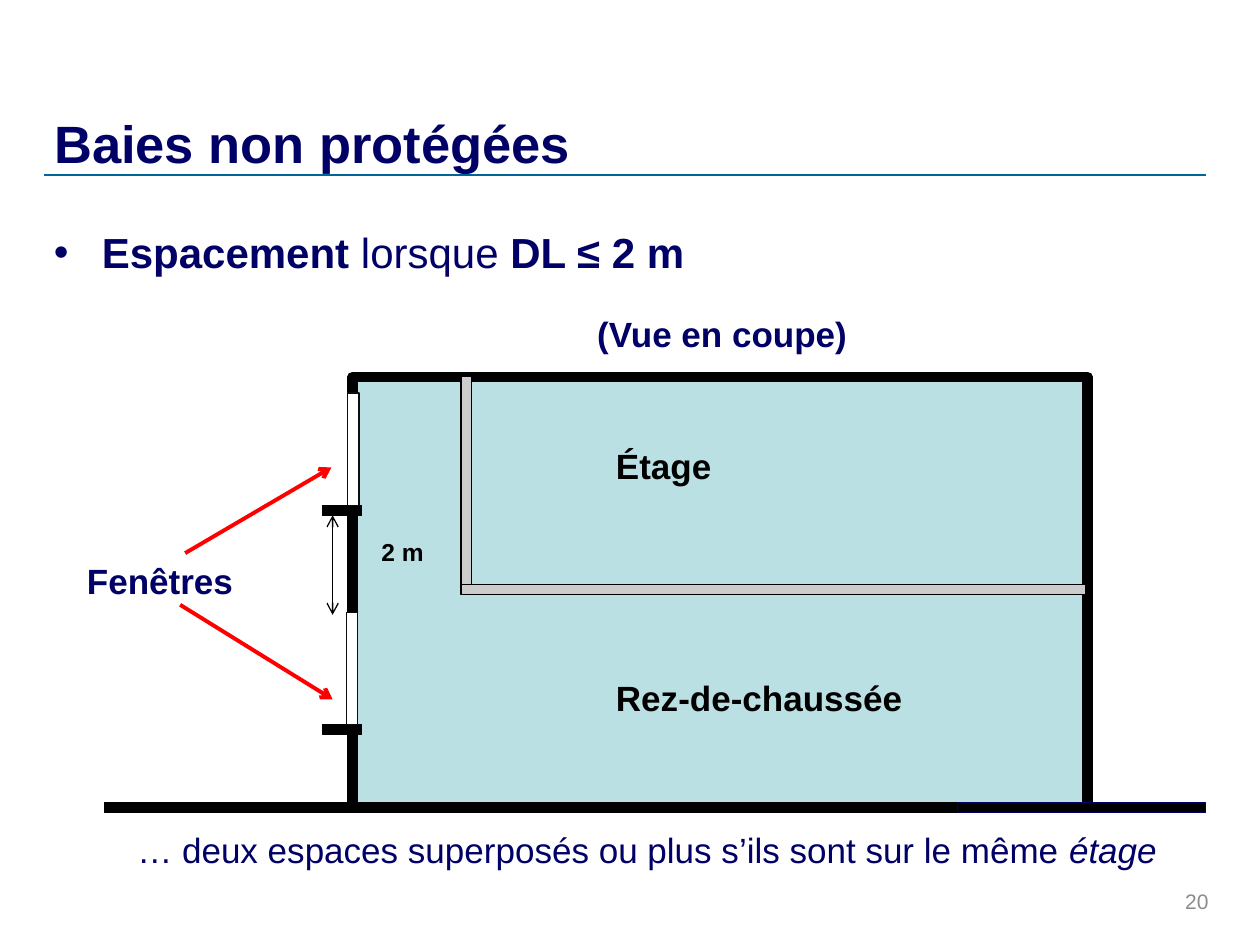
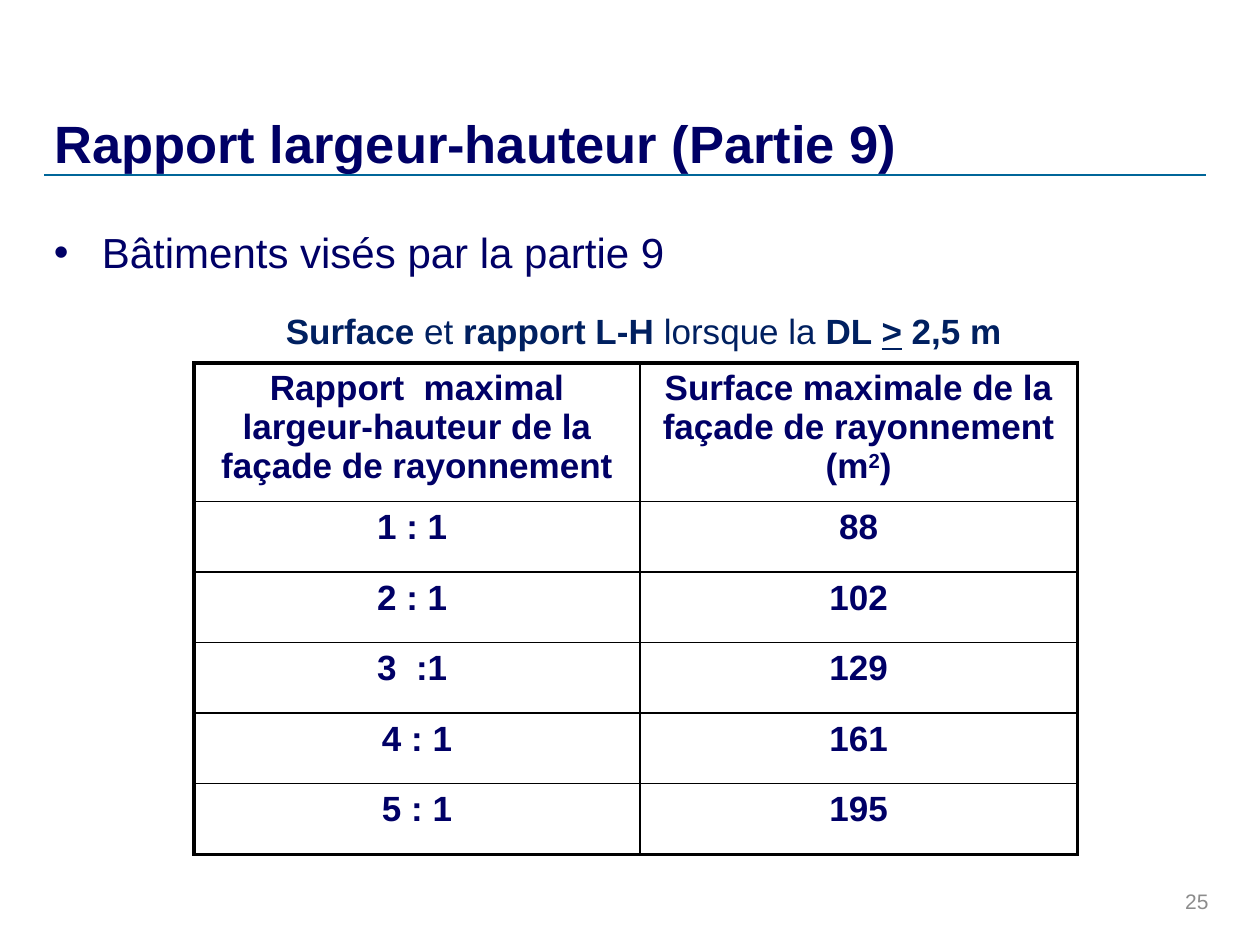
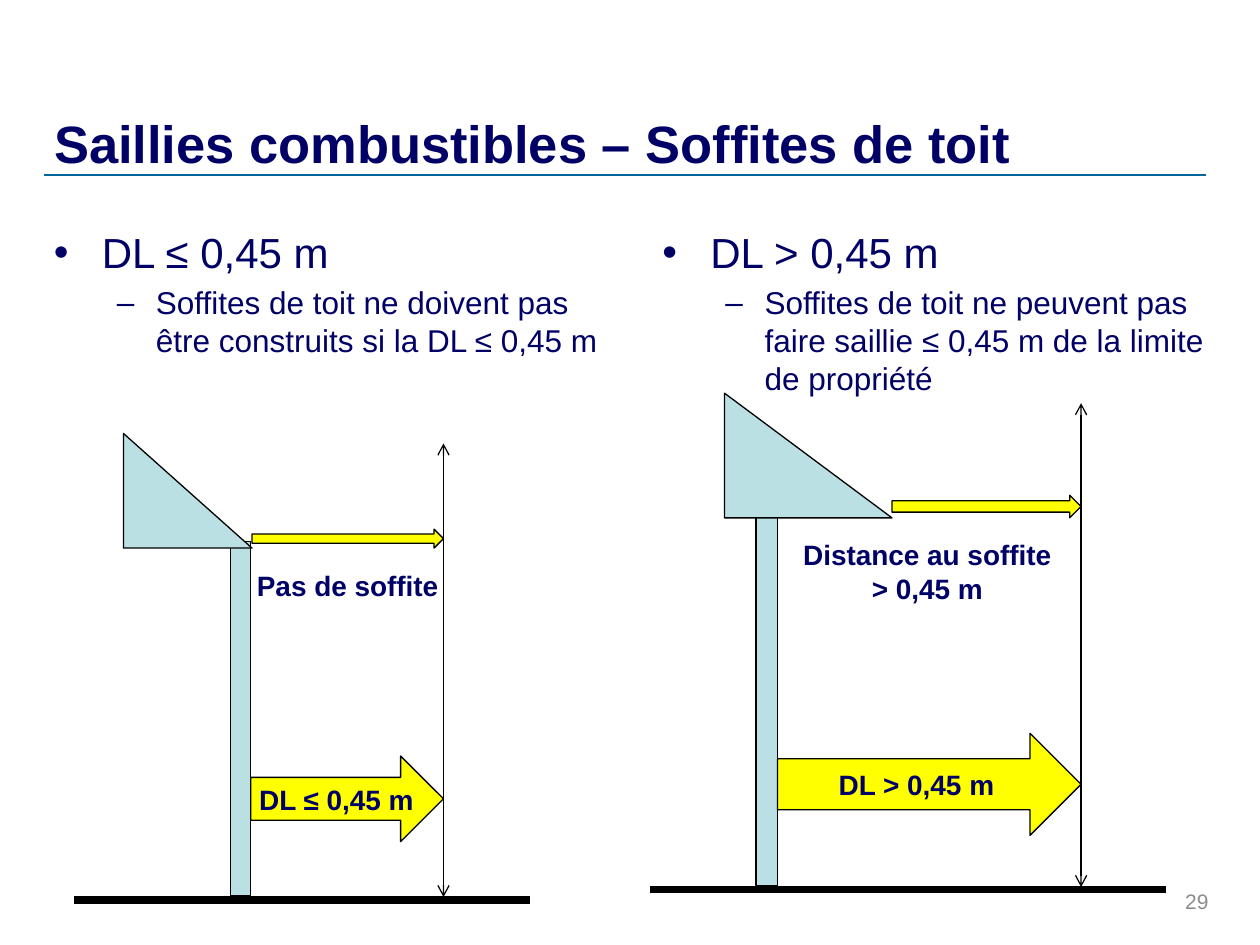
"""Build three slides on fire separation: openings, facade ratio and roof soffits."""
from dataclasses import dataclass

from lxml.etree import SubElement
from pptx import Presentation
from pptx.dml.color import RGBColor as RGB
from pptx.enum.shapes import MSO_CONNECTOR, MSO_SHAPE as SHAPE
from pptx.enum.text import MSO_ANCHOR as ANCHOR, MSO_AUTO_SIZE as AUTO, PP_ALIGN as ALIGN
from pptx.oxml.ns import qn
from pptx.util import Inches, Pt


@dataclass(frozen=True)
class Theme:
    """Colours, font and type sizes of the deck."""
    font: str = "Arial"
    navy: str = "000066"
    caption: str = "002060"
    rule: str = "006699"
    grey: str = "8C8C8C"
    black: str = "000000"
    white: str = "FFFFFF"
    frame: str = "0D0D0D"
    floor: str = "CCCCCC"
    wall: str = "BBE0E3"
    red: str = "FF0000"
    yellow: str = "FFFF00"
    title: int = 30
    body: int = 24
    label: int = 20
    sub: int = 18
    note: int = 16
    dim: int = 14
    page: int = 12
    thin: float = 0.75


T = Theme()
W, H = 10, 7.5
LEFT, RIGHT = 0.33, 9.57
BODY_TOP = 1.75
LEVELS = [("•", 0.38, -0.38, T.body), ("–", 0.81, -0.31, T.sub)]

OPENINGS = {
    "title": "Baies non protégées", "page": 20, "title_w": 7.74,
    "body": [(0, [("Espacement ", "b"), ("lorsque", ""), (" DL ≤ 2 m", "b")])],
    "note": [("… deux espaces superposés ou plus s’ils sont sur le même ", ""), ("étage", "i")],
    "view": "(Vue en coupe) ", "windows": "Fenêtres", "gap": "2 m",
    "storeys": [("Étage", 3.48, 1.67), ("Rez-de-chaussée", 5.32, 2.58)],
}
RATIO = {
    "title": "Rapport largeur-hauteur (Partie 9)", "page": 25, "title_w": 7.74,
    "body": [(0, [("Bâtiments visés par la partie 9", "")])],
    "caption": [("Surface ", "b"), ("et", ""), (" rapport L-H ", "b"), ("lorsque la ", ""),
                ("DL ", "b"), (">", "bu"), (" 2,5 m", "b")],
    "rows": [
        ([("Rapport  maximal largeur-hauteur de la façade de rayonnement", "b")],
         [("Surface maximale de la façade de rayonnement (m", "b"), ("2", "b^"), (")", "b")]),
        *[([(ratio, "b")], [(area, "b")]) for ratio, area in [
            ("1 : 1 ", "88"), ("2 : 1 ", "102"), ("3  :1 ", "129"),
            ("4 : 1", "161"), ("5 : 1", "195")]],
    ],
}
SOFFITS = {
    "title": "Saillies combustibles – Soffites de toit", "page": 29, "title_w": 8.14,
    "cases": [
        {"body": [(0, [("DL ≤ 0,45 m", "")]),
                  (1, [("Soffites de toit ne doivent pas\nêtre construits si la DL ≤ 0,45 m", "")])],
         "body_box": (LEFT, 4.7), "roof": (0.98, 3.44, 1.02, 0.91), "wall": (1.83, 0.16, 0.05),
         "limit": 3.52, "ground": (0.59, 4.21, 7.14), "soffit_h": 0.15, "dl": (6, 0.68),
         "dl_text": "DL ≤ 0,45 m", "note": "Pas de soffite", "note_box": (1.93, 4.46, 1.66, 0.37),
         "wrap": False},
        {"body": [(0, [("DL > 0,45 m", "")]),
                  (1, [("Soffites de toit ne peuvent pas faire saillie ≤ 0,45 m "
                        "de la limite de propriété", "")])],
         "body_box": (5.16, 4.53), "roof": (5.75, 3.12, 1.33, 0.99), "wall": (6, 0.17, 0.24),
         "limit": 8.58, "ground": (5.16, 9.25, 7.06), "soffit_h": 0.18, "dl": (5.82, 0.81),
         "dl_text": "DL > 0,45 m", "note": "Distance au soffite > 0,45 m",
         "note_box": (6.26, 4.22, 2.2, 0.64), "wrap": True},
    ],
}


def inches(*values):
    """Convert several lengths to EMU."""
    return [Inches(v) for v in values]


def add_runs(p, runs, size, color):
    """Add styled runs to a paragraph."""
    for text, style in runs:
        for i, part in enumerate(text.split("\n")):
            if i:
                p.add_line_break()
            r = p.add_run()
            r.text = part
            f = r.font
            f.name, f.size, f.color.rgb = T.font, Pt(size), RGB.from_string(color)
            f.bold, f.italic, f.underline = "b" in style, "i" in style, "u" in style
            if "^" in style:
                r._r.get_or_add_rPr().set("baseline", "30000")


def add_text(s, box, runs, size=T.label, color=T.navy, align=ALIGN.CENTER, wrap=True,
             anchor=ANCHOR.TOP):
    """Add a one-paragraph text box."""
    tf = s.shapes.add_textbox(*inches(*box)).text_frame
    tf.word_wrap, tf.vertical_anchor = wrap, anchor
    p = tf.paragraphs[0]
    p.alignment = align
    add_runs(p, runs, size, color)


def add_bullets(s, box, items):
    """Add a bulleted text box from level and runs pairs."""
    tf = s.shapes.add_textbox(*inches(*box)).text_frame
    tf.word_wrap = True
    for i, (level, runs) in enumerate(items):
        char, margin, indent, size = LEVELS[level]
        p = tf.add_paragraph() if i else tf.paragraphs[0]
        p.level = level
        if i:
            p.space_before = Pt(size * 0.2)
        pPr = p._p.get_or_add_pPr()
        pPr.set("marL", str(Inches(margin)))
        pPr.set("indent", str(Inches(indent)))
        SubElement(pPr, qn("a:buFont")).set("typeface", T.font)
        SubElement(pPr, qn("a:buChar")).set("char", char)
        add_runs(p, runs, size, T.navy)


def add_shape(s, kind, box, fill, line=T.black, width=T.thin):
    """Add a filled and outlined preset shape."""
    sp = s.shapes.add_shape(kind, *inches(*box))
    sp.shadow.inherit = False
    sp.fill.solid()
    sp.fill.fore_color.rgb = RGB.from_string(fill)
    sp.line.color.rgb = RGB.from_string(line)
    sp.line.width = Pt(width)
    return sp


def add_line(s, start, end, color=T.black, width=T.thin, heads=()):
    """Add a straight connector with optional arrowheads."""
    c = s.shapes.add_connector(MSO_CONNECTOR.STRAIGHT, *inches(*start, *end))
    c.line.color.rgb = RGB.from_string(color)
    c.line.width = Pt(width)
    ln = c.line._get_or_add_ln()
    for head in heads:
        SubElement(ln, qn(f"a:{head}")).set("type", "arrow")
    SubElement(c._element.spPr, qn("a:effectLst"))


def add_slide(prs, content):
    """Add a slide with the shared title, rule and page number."""
    s = prs.slides.add_slide(prs.slide_layouts[5])
    title = s.shapes.title
    title.left, title.top, title.width, title.height = inches(LEFT, 0.29, content["title_w"], 1.14)
    tf = title.text_frame
    tf.auto_size, tf.word_wrap, tf.vertical_anchor = AUTO.NONE, True, ANCHOR.BOTTOM
    p = tf.paragraphs[0]
    p.alignment = ALIGN.LEFT
    add_runs(p, [(content["title"], "b")], T.title, T.navy)
    add_line(s, (0.35, 1.39), (RIGHT, 1.39), T.rule, 1)
    add_text(s, (7.36, 6.95, 2.33, 0.4), [(str(content["page"]), "")], T.page, T.grey,
             ALIGN.RIGHT, anchor=ANCHOR.MIDDLE)
    return s


def build_openings(prs):
    """Draw the section through a two-storey building."""
    c = OPENINGS
    s = add_slide(prs, c)
    add_bullets(s, (LEFT, BODY_TOP, 9.25, 0.88), c["body"])
    add_text(s, (0.59, 6.53, 9.09, 0.44), c["note"])
    add_text(s, (0.59, 4.39, 1.36, 0.43), [(c["windows"], "b")], wrap=False)
    add_text(s, (3.23, 2.43, 5.08, 0.43), [(c["view"], "b")])

    x, y, w, h = 2.8, 2.99, 5.83, 3.42
    slab, window_h = 0.08, 0.89
    add_shape(s, SHAPE.RECTANGLE, (x, y, w, h), T.wall, width=6)
    for name, top, width in c["storeys"]:
        add_text(s, (4.79, top, width, 0.43), [(name, "b")], color=T.black, align=ALIGN.LEFT)
    add_text(s, (2.82, 4.21, 0.75, 0.33), [(c["gap"], "b")], T.dim, T.black)
    add_line(s, (2.64, 4.88), (2.64, 4.09), heads=("headEnd", "tailEnd"))
    for start, end in [((1.47, 4.39), (2.63, 3.71)), ((1.43, 4.8), (2.64, 5.55))]:
        add_line(s, start, end, T.red, 2.25, ("tailEnd",))
    for left, line in [(0.83, T.black), (RIGHT - 1.97, T.navy)]:
        add_shape(s, SHAPE.RECTANGLE, (left, 6.37, 1.97, slab), T.black, line)
    for left, top, width, height in [(3.66, 4.64, 4.96, slab), (3.66, y, slab, 1.65)]:
        add_shape(s, SHAPE.RECTANGLE, (left, top, width, height), T.floor)
    for left, top in [(2.76, 3.12), (2.75, 4.86)]:
        add_line(s, (2.79, top), (2.79, top + 0.92), T.white, 6)
        add_shape(s, SHAPE.RECTANGLE, (2.56, top + window_h, 0.31, slab), T.black)
        add_shape(s, SHAPE.RECTANGLE, (left, top, 0.09, window_h), T.white, T.frame)


def set_borders(cell, widths):
    """Set the left, right, top and bottom borders of a cell."""
    tcPr = cell._tc.get_or_add_tcPr()
    for i, (side, width) in enumerate(zip("LRTB", widths)):
        ln = SubElement(tcPr, qn(f"a:ln{side}"), w=str(Pt(width)))
        SubElement(SubElement(ln, qn("a:solidFill")), qn("a:srgbClr")).set("val", T.black)
        tcPr.insert(i, ln)


def build_ratio(prs):
    """Lay out the table of ratios and areas."""
    c = RATIO
    s = add_slide(prs, c)
    add_bullets(s, (LEFT, BODY_TOP, 9.25, 0.6), c["body"])
    rows, cols, heights = c["rows"], [3.54, 3.47], [1.03] + [0.56] * 5
    table = s.shapes.add_table(len(rows), len(cols),
                               *inches(1.54, 2.88, sum(cols), sum(heights))).table
    table.first_row = table.horz_banding = False
    for col, width in zip(table.columns, cols):
        col.width = Inches(width)
    outer, inner = 2.25, 1
    for i, row in enumerate(rows):
        table.rows[i].height = Inches(heights[i])
        for j, runs in enumerate(row):
            cell = table.cell(i, j)
            cell.fill.background()
            edges = (j == 0, j == len(cols) - 1, i == 0, i == len(rows) - 1)
            set_borders(cell, [outer if edge else inner for edge in edges])
            p = cell.text_frame.paragraphs[0]
            p.alignment = ALIGN.CENTER
            add_runs(p, runs, T.label, T.navy)
    add_text(s, (2.17, 2.41, 6.04, 0.43), c["caption"], color=T.caption, align=ALIGN.LEFT,
             wrap=False)


def draw_soffit(s, case):
    """Draw one wall, roof and property limit with its distances."""
    x, y, w, h = case["roof"]
    eave, base = x + w, y + h
    wall_x, wall_w, overlap = case["wall"]
    limit, (start, end, ground) = case["limit"], case["ground"]
    wall_top, wall_right = base - overlap, wall_x + wall_w
    dl_y, dl_h = case["dl"]
    soffit_h = case["soffit_h"]
    add_bullets(s, (case["body_box"][0], BODY_TOP, case["body_box"][1], 1.6), case["body"])
    add_shape(s, SHAPE.RECTANGLE, (wall_x, wall_top, wall_w, ground - 0.03 - wall_top), T.wall)
    add_line(s, (limit, y + 0.08), (limit, ground - 0.02), heads=("headEnd", "tailEnd"))
    add_shape(s, SHAPE.RIGHT_TRIANGLE, case["roof"], T.wall)
    sp = add_shape(s, SHAPE.RIGHT_ARROW, (wall_right, dl_y, limit - wall_right, dl_h), T.yellow)
    tf = sp.text_frame
    tf.word_wrap, tf.vertical_anchor = False, ANCHOR.MIDDLE
    tf.margin_left = tf.margin_right = 0
    p = tf.paragraphs[0]
    p.alignment = ALIGN.CENTER
    add_runs(p, [(case["dl_text"], "b")], T.note, T.navy)
    add_shape(s, SHAPE.RIGHT_ARROW, (eave, base - soffit_h, limit - eave, soffit_h), T.yellow)
    add_line(s, (start, ground), (end, ground), width=4.5)
    add_text(s, case["note_box"], [(case["note"], "b")], T.note, wrap=case["wrap"])


def build_soffits(prs):
    """Draw the two soffit cases side by side."""
    s = add_slide(prs, SOFFITS)
    for case in SOFFITS["cases"]:
        draw_soffit(s, case)


def main():
    """Build and save the deck."""
    prs = Presentation()
    prs.slide_width, prs.slide_height = inches(W, H)
    for build in (build_openings, build_ratio, build_soffits):
        build(prs)
    prs.save("out.pptx")


if __name__ == "__main__":
    main()
